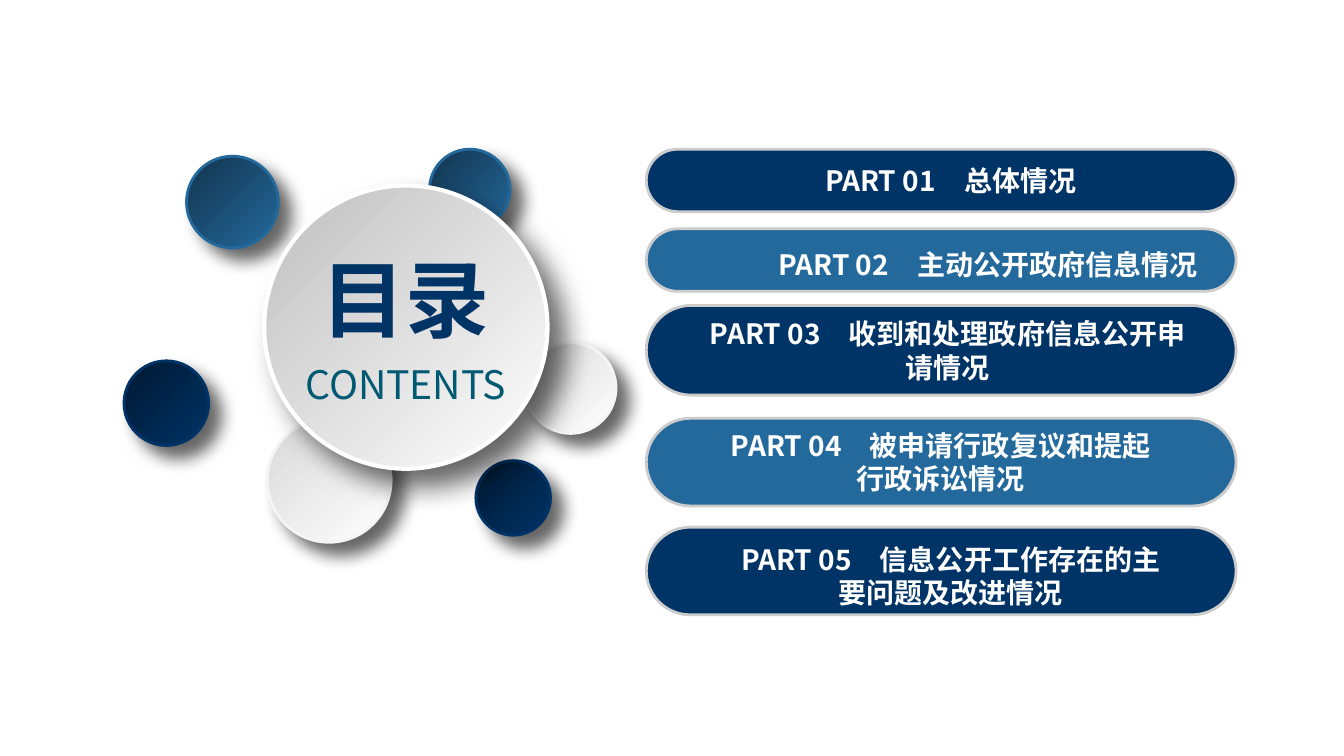
from lxml.etree import SubElement
from pptx import Presentation
from pptx.dml.color import RGBColor
from pptx.enum.shapes import MSO_SHAPE as Preset
from pptx.enum.text import PP_ALIGN as Align
from pptx.oxml.ns import qn
from pptx.util import Inches, Pt

FONT = "Noto Sans CJK SC"
COLORS = {
    "navy": "003366", "navy_dark": "001933",
    "blue": "24699C", "blue_dark": "12344E",
    "white": "FFFFFF", "silver": "D9D9D9", "grey": "BFBFBF",
    "rim": "CCCCCC", "pale": "F5F5F5", "teal": "005973", "black": "000000",
}
PILL_LEFT, PILL_WIDTH = 6.41, 5.85
PARTS = [
    ("PART 01　总体情况", (1.48, 0.62), (7.19, 1.57, 4.48, 0.44)),
    ("PART 02　主动公开政府信息情况", (2.27, 0.62), (7.35, 2.41, 4.9, 0.44)),
    ("PART 03　收到和处理政府信息公开申请情况", (3.03, 0.89), (6.83, 3.09, 5.14, 0.77)),
    ("PART 04　被申请行政复议和提起\v行政诉讼情况", (4.15, 0.87), (7.09, 4.2, 4.48, 0.77)),
    ("PART 05　信息公开工作存在的主\v要问题及改进情况", (5.23, 0.87), (7.19, 5.33, 4.48, 0.77)),
]
BUBBLES = [
    (4.72, 4.57, 0.74, "navy", "navy_dark", "navy"),
    (1.85, 1.55, 0.91, "blue", "blue_dark", "blue"),
    (1.23, 3.58, 0.84, "navy", "navy_dark", "navy"),
    (4.26, 1.48, 0.8, "blue", "blue_dark", "blue"),
    (2.65, 4.15, 1.23, "white", "silver", "pale"),
    (5.21, 3.4, 0.9, "white", "silver", "pale"),
]


def rgb(name):
    """Return the named colour."""
    return RGBColor.from_string(COLORS[name])


def add_outlined(slide, preset, box, rim, rim_width):
    """Add a preset shape with a coloured rim and no theme shadow."""
    shape = slide.shapes.add_shape(preset, *map(Inches, box))
    shape.shadow.inherit = False
    shape.line.color.rgb = rgb(rim)
    shape.line.width = Pt(rim_width)
    return shape


def add_pill(slide, top, height, color):
    """Add the rounded bar behind one part title."""
    pill = add_outlined(slide, Preset.ROUNDED_RECTANGLE,
                        (PILL_LEFT, top, PILL_WIDTH, height), "rim", 2)
    pill.adjustments[0] = 0.5
    pill.fill.solid()
    pill.fill.fore_color.rgb = rgb(color)


def cast_shadow(shape, blur, distance):
    """Give a shape a soft black shadow towards the lower right."""
    effects = shape.element.spPr.find(qn("a:effectLst"))
    shadow = SubElement(effects, qn("a:outerShdw"), blurRad=str(Pt(blur)),
                        dist=str(Pt(distance)), dir="2700000",
                        algn="tl", rotWithShape="0")
    tint = SubElement(shadow, qn("a:srgbClr"), val=COLORS["black"])
    SubElement(tint, qn("a:alpha"), val="60000")


def add_bubble(slide, left, top, size, light, dark, rim,
               rim_width=2, blur=12, distance=12):
    """Add a shaded circle, darkest at the upper left."""
    bubble = add_outlined(slide, Preset.OVAL, (left, top, size, size), rim, rim_width)
    bubble.fill.gradient()
    bubble.fill.gradient_angle = 135
    for stop, color, position in zip(bubble.fill.gradient_stops, (light, dark), (0, 1)):
        stop.color.rgb = rgb(color)
        stop.position = position
    cast_shadow(bubble, blur, distance)


def add_label(slide, box, text, size, color, bold=False, wrap=True):
    """Add a centred line of text."""
    frame = slide.shapes.add_textbox(*map(Inches, box)).text_frame
    frame.word_wrap = wrap
    frame.text = text
    paragraph = frame.paragraphs[0]
    paragraph.alignment = Align.CENTER
    for run in paragraph.runs:
        run.font.size = Pt(size)
        run.font.bold = bold
        run.font.color.rgb = rgb(color)
        run.font.name = FONT
        SubElement(run.font._element, qn("a:ea"), typeface=FONT)


def main():
    """Build the contents slide."""
    deck = Presentation()
    deck.slide_width, deck.slide_height = Inches(13.33), Inches(7.5)
    slide = deck.slides.add_slide(deck.slide_layouts[6])
    for index, (title, (top, height), title_box) in enumerate(PARTS):
        add_pill(slide, top, height, ("navy", "blue")[index % 2])
        add_label(slide, title_box, title, 20, "white", bold=True)
    for bubble in BUBBLES:
        add_bubble(slide, *bubble)
    add_bubble(slide, 2.62, 1.84, 2.81, "white", "grey", "white",
               rim_width=3, blur=20, distance=16)
    add_label(slide, (3.08, 2.41, 1.88, 1.11), "目录", 60, "navy", bold=True, wrap=False)
    add_label(slide, (2.74, 3.53, 2.57, 0.57), "CONTENTS", 28, "teal")
    deck.save("out.pptx")


if __name__ == "__main__":
    main()
